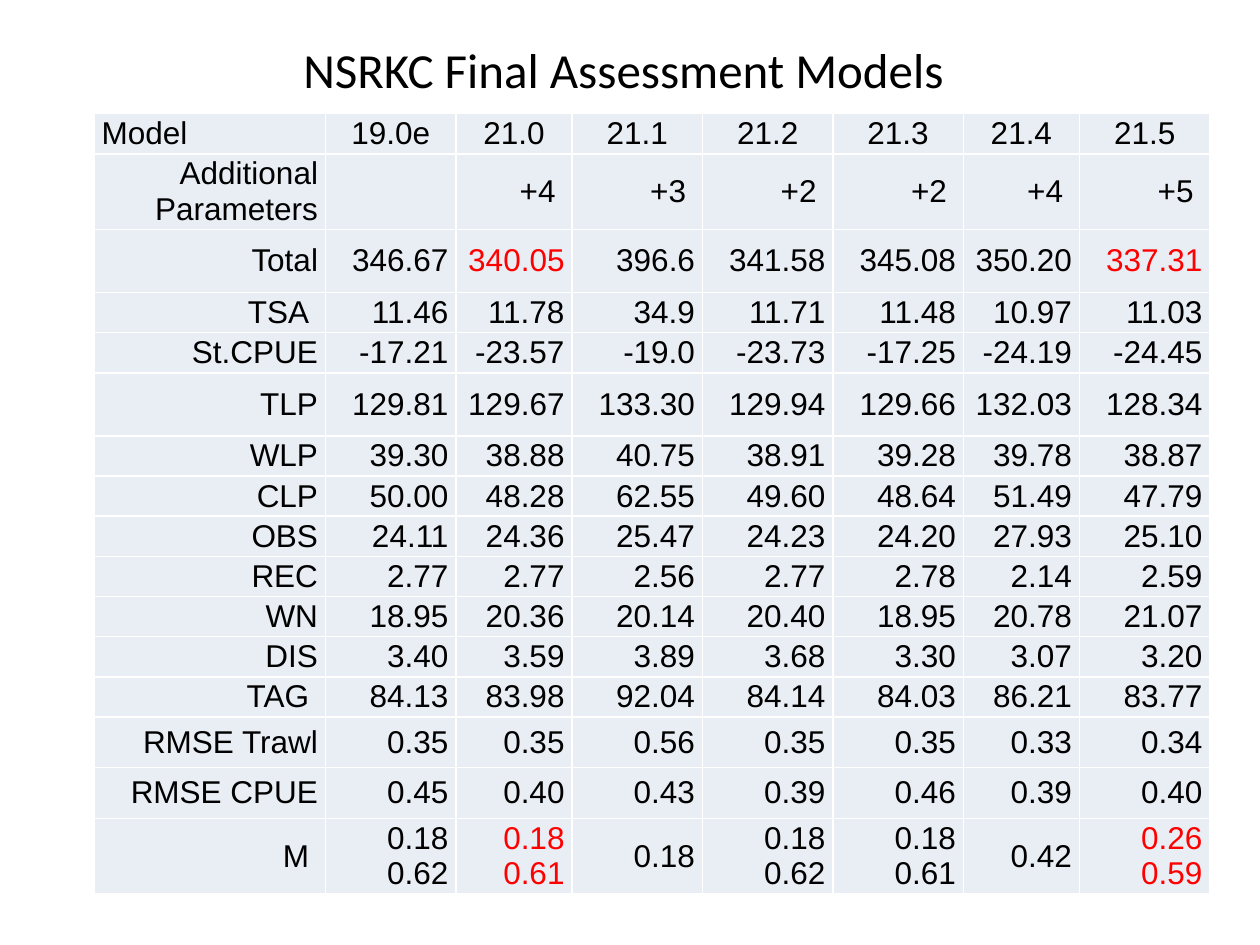
from pptx import Presentation
from pptx.dml.color import RGBColor
from pptx.enum.text import MSO_ANCHOR, PP_ALIGN
from pptx.oxml import parse_xml
from pptx.oxml.ns import nsdecls
from pptx.util import Cm, Pt

BLACK = RGBColor(0x00, 0x00, 0x00)
RED = RGBColor(0xFF, 0x00, 0x00)
CELL_FILL = RGBColor(0xE9, 0xED, 0xF4)
BORDER = RGBColor(0xFF, 0xFF, 0xFF)

MIDDLE = MSO_ANCHOR.MIDDLE
LEFT, CENTER, RIGHT = PP_ALIGN.LEFT, PP_ALIGN.CENTER, PP_ALIGN.RIGHT

# Row height in cm, then the label and the value of each model
ROWS = [
    (0.81, "Model|19.0e|21.0|21.1|21.2|21.3|21.4|21.5"),
    (1.52, "Additional Parameters||+4|+3|+2|+2|+4|+5"),
    (1.27, "Total|346.67|340.05|396.6|341.58|345.08|350.20|337.31"),
    (0.81, "TSA|11.46|11.78|34.9|11.71|11.48|10.97|11.03"),
    (0.81, "St.CPUE|-17.21|-23.57|-19.0|-23.73|-17.25|-24.19|-24.45"),
    (1.27, "TLP|129.81|129.67|133.30|129.94|129.66|132.03|128.34"),
    (0.81, "WLP|39.30|38.88|40.75|38.91|39.28|39.78|38.87"),
    (0.81, "CLP|50.00|48.28|62.55|49.60|48.64|51.49|47.79"),
    (0.81, "OBS|24.11|24.36|25.47|24.23|24.20|27.93|25.10"),
    (0.81, "REC|2.77|2.77|2.56|2.77|2.78|2.14|2.59"),
    (0.81, "WN|18.95|20.36|20.14|20.40|18.95|20.78|21.07"),
    (0.81, "DIS|3.40|3.59|3.89|3.68|3.30|3.07|3.20"),
    (0.81, "TAG|84.13|83.98|92.04|84.14|84.03|86.21|83.77"),
    (1.02, "RMSE Trawl|0.35|0.35|0.56|0.35|0.35|0.33|0.34"),
    (1.02, "RMSE CPUE|0.45|0.40|0.43|0.39|0.46|0.39|0.40"),
    (1.52, "M|0.18\n0.62|0.18\n0.61|0.18|0.18\n0.62|0.18\n0.61|0.42|0.26\n0.59"),
]
COL_WIDTHS = [4.66, 2.63, 2.34, 2.63, 2.63, 2.63, 2.34, 2.63]
BEST_MODELS = (2, 7)
RED_ROWS = ("Total", "M")
INSET_LABELS = ("TSA", "TAG", "M")


def set_font(p, name, size, color):
    p.font.name = name
    p.font.size = Pt(size)
    p.font.color.rgb = color


def add_title(s, left, top, width, height):
    tf = s.shapes.add_textbox(Cm(left), Cm(top), Cm(width), Cm(height)).text_frame
    tf.word_wrap = True
    tf.vertical_anchor = MIDDLE
    p = tf.paragraphs[0]
    p.text = "NSRKC Final Assessment Models"
    p.alignment = CENTER
    set_font(p, "Calibri", 28, BLACK)


def add_borders(cell):
    # Borders come before the fill in the cell properties
    tc_pr = cell._tc.get_or_add_tcPr()
    for i, side in enumerate(("lnL", "lnR", "lnT", "lnB")):
        tc_pr.insert(i, parse_xml(
            f'<a:{side} {nsdecls("a")} w="{Pt(1)}"><a:solidFill>'
            f'<a:srgbClr val="{BORDER}"/></a:solidFill></a:{side}>'))


def fill_cell(cell, text, align, color, inset):
    cell.fill.solid()
    cell.fill.fore_color.rgb = CELL_FILL
    add_borders(cell)
    cell.vertical_anchor = MIDDLE
    cell.margin_left = Cm(0.15)
    cell.margin_right = Cm(0.33 if inset else 0.15)
    cell.margin_top = cell.margin_bottom = 0
    cell.text = text
    for p in cell.text_frame.paragraphs:
        p.alignment = align
        set_font(p, "Arial", 18, color)


def add_model_table(s, left, top):
    width, height = sum(COL_WIDTHS), sum(h for h, _ in ROWS)
    table = s.shapes.add_table(len(ROWS), len(COL_WIDTHS), Cm(left), Cm(top),
                               Cm(width), Cm(height)).table
    table.first_row = table.horz_banding = False
    for col, w in zip(table.columns, COL_WIDTHS):
        col.width = Cm(w)
    for i, (h, line) in enumerate(ROWS):
        table.rows[i].height = Cm(h)
        values = line.split("|")
        label = values[0]
        for j, text in enumerate(values):
            align = RIGHT if i else CENTER if j else LEFT
            color = RED if label in RED_ROWS and j in BEST_MODELS else BLACK
            inset = text in INSET_LABELS or text.startswith("+")
            fill_cell(table.cell(i, j), text, align, color, inset)


def main():
    prs = Presentation()
    prs.slide_width, prs.slide_height = Cm(25.4), Cm(19.05)
    s = prs.slides.add_slide(prs.slide_layouts[6])
    add_title(s, 0.74, 0.43, 23.65, 1.9)
    add_model_table(s, 1.9, 2.29)
    prs.save("out.pptx")


if __name__ == "__main__":
    main()
